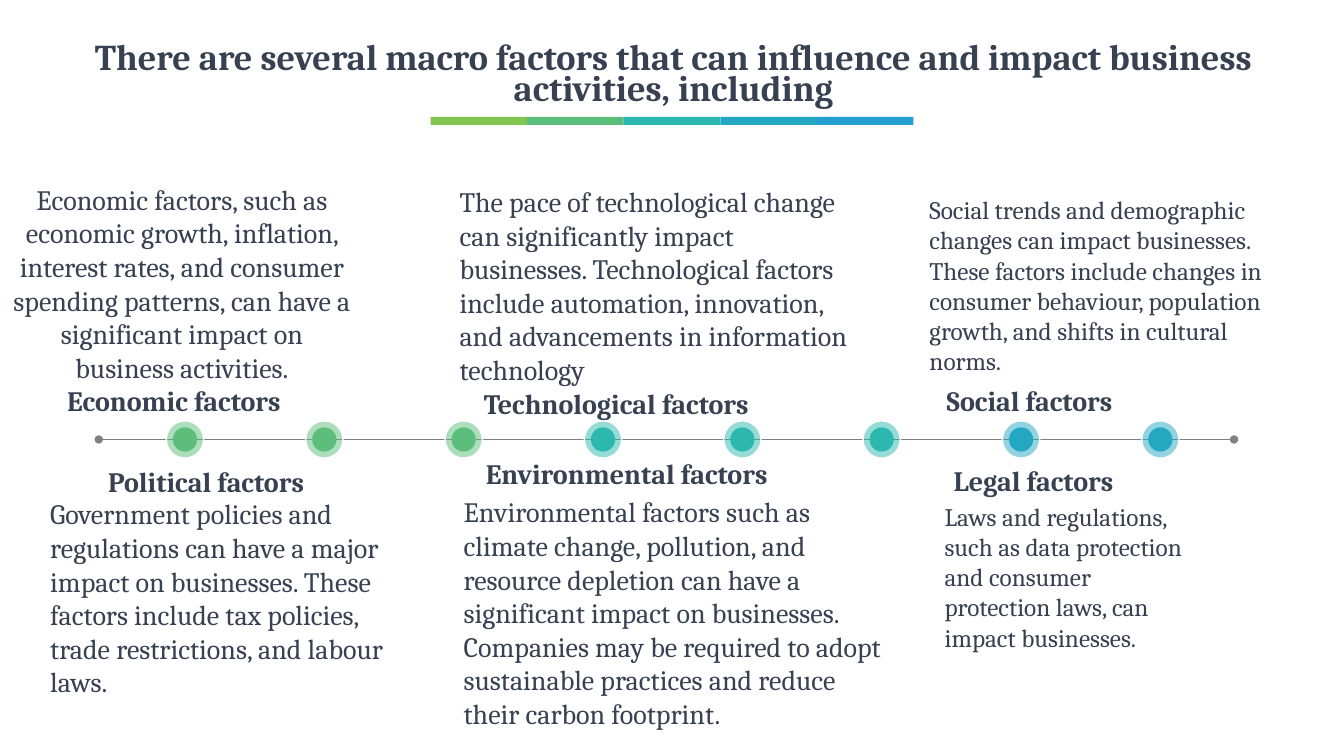
"""Build a slide of six macro factors placed along a dotted timeline."""
from lxml.etree import SubElement
from pptx import Presentation
from pptx.dml.color import RGBColor
from pptx.enum.shapes import MSO_CONNECTOR as Connector, MSO_SHAPE as Shape
from pptx.enum.text import MSO_ANCHOR as Anchor, MSO_AUTO_SIZE as AutoSize, PP_ALIGN as Align
from pptx.oxml.ns import qn
from pptx.util import Inches, Pt

LIME = RGBColor(0x82, 0xC6, 0x50)
GREEN = RGBColor(0x5C, 0xBE, 0x7A)
TEAL = RGBColor(0x2C, 0xB8, 0xAE)
CYAN = RGBColor(0x24, 0xA8, 0xC2)
BLUE = RGBColor(0x24, 0x9E, 0xD2)
INK = RGBColor(0x37, 0x41, 0x51)
GRAY = RGBColor(0x80, 0x80, 0x80)
WHITE = RGBColor(0xFF, 0xFF, 0xFF)

BAR_COLORS = [LIME, GREEN, TEAL, CYAN, BLUE]
DOT_COLORS = [GREEN] * 3 + [TEAL] * 3 + [CYAN] * 2
LINE_Y = 4.36

TITLE = ("There are several macro factors that can influence and impact business "
         "activities, including")
HEADINGS = [
    ("Economic factors", (0.4, 3.76, 2.65, 0.44), Align.CENTER),
    ("Political factors", (0.92, 4.56, 2.25, 0.44), Align.CENTER),
    ("Technological factors", (4.7, 3.79, 3.18, 0.44), Align.LEFT),
    ("Environmental factors", (4.72, 4.48, 3.86, 0.44), Align.LEFT),
    ("Social factors", (9.29, 3.76, 2.18, 0.44), Align.LEFT),
    ("Legal factors", (9.36, 4.55, 2.33, 0.44), Align.LEFT),
]
DESCRIPTIONS = [
    ("Economic factors, such as economic growth, inflation, interest rates, and consumer "
     "spending patterns, can have a significant impact on business activities.",
     (0, 1.76, 3.61, 2.12), 20, Align.CENTER),
    ("Government policies and regulations can have a major impact on businesses. These "
     "factors include tax policies, trade restrictions, and labour laws.",
     (0.4, 4.88, 3.5, 2.46), 20, Align.LEFT),
    ("The pace of technological change can significantly impact businesses. Technological "
     "factors include automation, innovation, and advancements in information technology",
     (4.46, 1.78, 4.1, 2.12), 20, Align.LEFT),
    ("Environmental factors such as climate change, pollution, and resource depletion can "
     "have a significant impact on businesses. Companies may be required to adopt "
     "sustainable practices and reduce their carbon footprint.",
     (4.5, 4.86, 4.41, 2.46), 20, Align.LEFT),
    ("Social trends and demographic changes can impact businesses. These factors include "
     "changes in consumer behaviour, population growth, and shifts in cultural norms.",
     (9.12, 1.88, 3.81, 1.92), 18, Align.LEFT),
    ("Laws and regulations, such as data protection and consumer protection laws, can "
     "impact businesses.", (9.27, 4.92, 2.68, 1.62), 18, Align.LEFT),
]


def write_text(shape, text, size, bold, alignment):
    frame = shape.text_frame
    frame.word_wrap = True
    frame.text = text
    paragraph = frame.paragraphs[0]
    paragraph.alignment = alignment
    font = paragraph.runs[0].font
    values = {"name": "Cambria", "size": Pt(size), "bold": bold}
    for name, value in values.items():
        setattr(font, name, value)
    font.color.rgb = INK
    return paragraph


def add_title(slide):
    title = slide.shapes.title
    box = {"left": 0.35, "top": 0.37, "width": 12.66, "height": 0.79}
    for name, value in box.items():
        setattr(title, name, Inches(value))
    paragraph = write_text(title, TITLE, 25.9, True, Align.CENTER)
    paragraph.line_spacing = 0.7
    title.text_frame.auto_size = AutoSize.NONE
    title.text_frame.vertical_anchor = Anchor.MIDDLE


def add_text(slide, text, box, size, bold, alignment):
    shape = slide.shapes.add_textbox(*map(Inches, box))
    write_text(shape, text, size, bold, alignment)
    shape.text_frame.auto_size = AutoSize.SHAPE_TO_FIT_TEXT


def add_filled(slide, kind, box, color):
    shape = slide.shapes.add_shape(kind, *map(Inches, box))
    shape.shadow.inherit = False
    shape.fill.solid()
    shape.fill.fore_color.rgb = color
    shape.line.fill.background()
    return shape


def add_circle(slide, center, diameter, color):
    box = (center - diameter / 2, LINE_Y - diameter / 2, diameter, diameter)
    return add_filled(slide, Shape.OVAL, box, color)


def add_dot(slide, center, color):
    halo = add_circle(slide, center, 0.37, color)
    fill_color = halo.fill._xPr.find(qn("a:solidFill"))[0]
    SubElement(fill_color, qn("a:alpha"), val="50000")
    halo.line.color.rgb = WHITE
    halo.line.width = Pt(1)
    add_circle(slide, center, 0.24, color)


def add_timeline(slide):
    ends = map(Inches, (0.98, LINE_Y, 12.24, LINE_Y))
    connector = slide.shapes.add_connector(Connector.STRAIGHT, *ends)
    connector.line.color.rgb = GRAY
    connector.line.width = Pt(1.25)
    line = connector.line._get_or_add_ln()
    for end in ("a:headEnd", "a:tailEnd"):
        SubElement(line, qn(end), type="oval")
    SubElement(connector._element.spPr, qn("a:effectLst"))
    for index, color in enumerate(DOT_COLORS):
        add_dot(slide, 1.835 + index * 1.382, color)


def main():
    presentation = Presentation()
    presentation.slide_width = Inches(13.33)
    presentation.slide_height = Inches(7.5)
    slide = presentation.slides.add_slide(presentation.slide_layouts[5])
    for index, color in enumerate(BAR_COLORS):
        add_filled(slide, Shape.RECTANGLE, (4.27 + index * 0.958, 1.16, 0.958, 0.08), color)
    add_title(slide)
    add_timeline(slide)
    for text, box, alignment in HEADINGS:
        add_text(slide, text, box, 20, True, alignment)
    for text, box, size, alignment in DESCRIPTIONS:
        add_text(slide, text, box, size, False, alignment)
    presentation.save("out.pptx")


if __name__ == "__main__":
    main()
